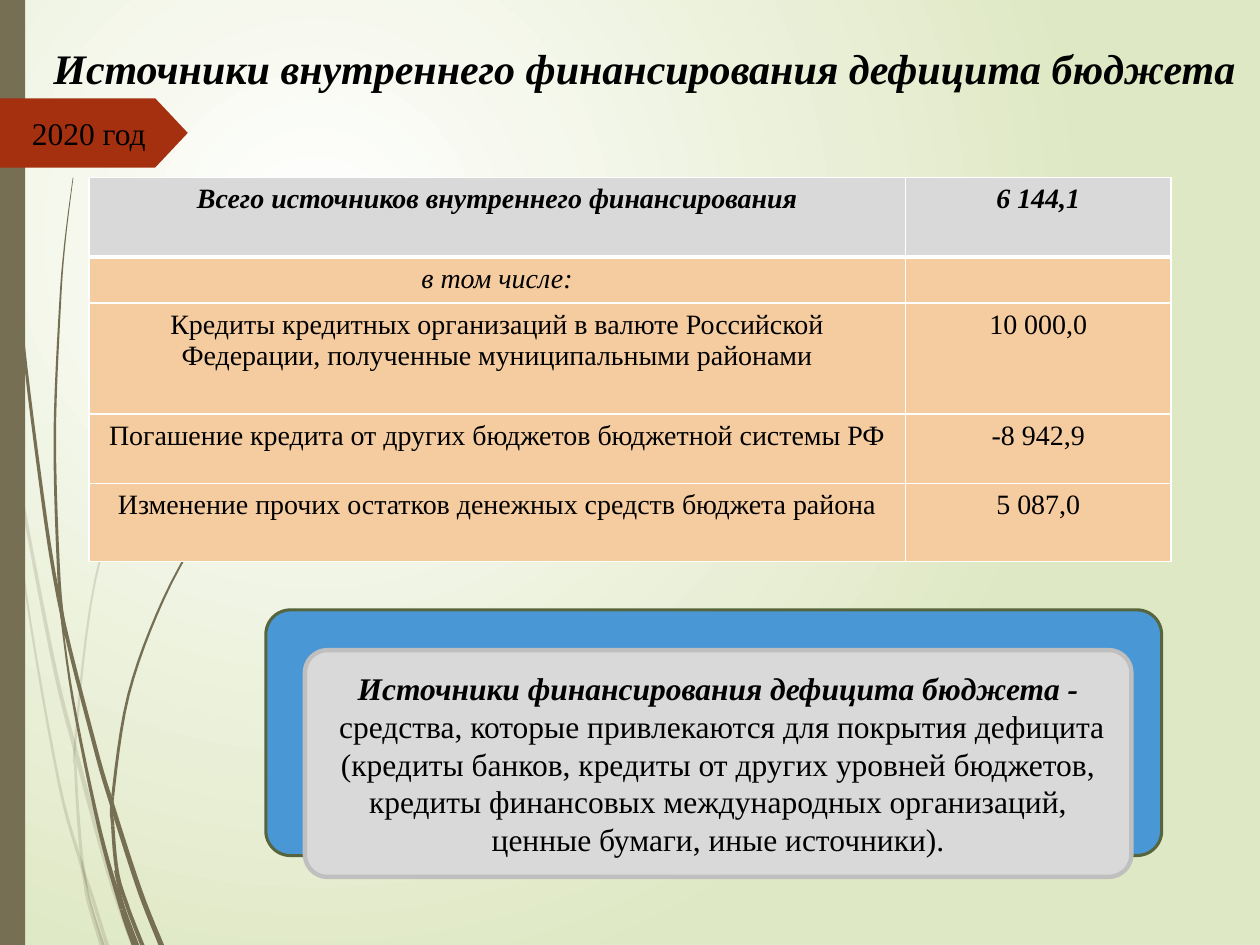
from dataclasses import dataclass
from typing import NamedTuple

import lxml.etree
import pptx
import pptx.dml.color
import pptx.enum.shapes
import pptx.enum.text
import pptx.oxml.ns
import pptx.util

WIDE, HIGH = pptx.util.Inches(10), pptx.util.Inches(7.5)
UNIT = WIDE // 100
ROWS = 75
STEPS = 6
KIND = pptx.enum.shapes.MSO_SHAPE
ALIGN = pptx.enum.text.PP_ALIGN
ANCHOR = pptx.enum.text.MSO_ANCHOR


@dataclass(frozen=True)
class Theme:
    font: str = "Times New Roman"
    ink: str = "000000"
    white: str = "FFFFFF"
    lime: str = "DFE8C4"
    stem: str = "766F54"
    rust: str = "A53010"
    gray: str = "D9D9D9"
    rim: str = "BFBFBF"
    peach: str = "F5CBA0"
    blue: str = "4A97D6"
    moss: str = "56653E"
    title: int = 24
    body: int = 18
    cell: int = 16


THEME = Theme()


class Box(NamedTuple):
    left: float
    top: float
    width: float
    height: float


class Line(NamedTuple):
    text: str
    bold: bool = False
    slant: bool = False


class Wisp(NamedTuple):
    knots: list[tuple[float, float]]
    cuts: list[int]
    thin: float
    thick: float
    alpha: int = 100


class Plate(NamedTuple):
    kind: int
    box: Box
    fill: str
    bend: float | None = None
    edge: str | None = None
    weight: float = 0


class Row(NamedTuple):
    height: float
    label: Line
    value: Line
    fill: str = THEME.peach
    base: float = 1


WISPS = [
    Wisp([(0, 29), (0.9, 35), (4.15, 52.1), (6, 59.6), (8.65, 69.3), (10.6, 75)],
         [1, 3], 0.2, 0.45, 20),
    Wisp([(0.8, 35), (2.05, 47), (4.65, 62), (6.5, 68.8), (7, 71.4), (8.1, 75)],
         [4], 0.1, 0.4, 20),
    Wisp([(21.7, 15.3), (15.85, 24.5), (11.05, 34.8), (7.55, 46.1), (6, 58.6),
          (6, 61), (6.2, 64.6), (6.6, 68.8), (7.3, 71.1), (8.5, 75)], [4, 5, 8], 0.1, 0.3, 20),
    Wisp([(6.5, 68.3), (7.1, 71.3), (8.2, 75)], [], 0.1, 0.2, 20),
    Wisp([(0.25, 0), (0.4, 4.8), (0.55, 11), (1.45, 23.3), (2.85, 35.5), (4.65, 47.5),
          (7.5, 59.1), (9, 64.2), (11.1, 70.7), (12.8, 75)], [5, 7], 0.1, 0.45),
    Wisp([(4.7, 47.7), (5.8, 55.6), (7.9, 65.8), (9.7, 72.2), (10.7, 75)], [3], 0.1, 0.5),
    Wisp([(5.8, 14.1), (5.15, 19.3), (4.75, 24.5), (4.35, 34.9), (4.7, 46.2), (5.2, 50.5)],
         [4], 0.05, 0.3),
    Wisp([(21.6, 34.4), (19.1, 37.35), (16.85, 40.55), (13, 47.5), (10.2, 55.15),
          (8.95, 63.2), (8.95, 65.5), (9.3, 69.2), (10.1, 71.9), (11.3, 75)], [5, 6, 8], 0.1, 0.35),
    Wisp([(9.1, 69.1), (9.8, 71.9), (10.9, 75)], [], 0.1, 0.3),
]

PLATES = [
    Plate(KIND.RECTANGLE, Box(0, 0, 2, ROWS), THEME.stem),
    Plate(KIND.PENTAGON, Box(0, 7.8, 14.9, 5.5), THEME.rust, 0.47),
    Plate(KIND.ROUNDED_RECTANGLE, Box(21.1, 48.4, 71.1, 19.5), THEME.blue, 0.1, THEME.moss, 1.75),
]
CARD = Plate(KIND.ROUNDED_RECTANGLE, Box(24.2, 51.6, 65.6, 18), THEME.gray, 0.1, THEME.rim, 2.5)
NOTE = [
    Line("Источники финансирования дефицита бюджета -", True, True),
    Line(" средства, которые привлекаются для покрытия дефицита (кредиты банков, "
         "кредиты от других уровней бюджетов, кредиты финансовых международных "
         "организаций, ценные бумаги, иные источники)."),
]

COLS = [64.8, 21.1]
TABLE = [
    Row(6.3, Line("Всего источников внутреннего финансирования", True, True),
        Line("6 144,1", True, True), THEME.gray, 3),
    Row(3.6, Line("в том числе:", slant=True), Line("")),
    Row(8.8, Line("Кредиты кредитных организаций в валюте Российской Федерации, "
                  "полученные муниципальными районами"), Line("10 000,0")),
    Row(5.5, Line("Погашение кредита от других бюджетов бюджетной системы РФ"), Line("-8 942,9")),
    Row(6.2, Line("Изменение прочих остатков денежных средств бюджета района"), Line("5 087,0")),
]


def span(size: float) -> int:
    return round(size * UNIT)


def place(box: Box) -> list[int]:
    return [span(size) for size in box]


def tint(code: str):
    return pptx.dml.color.RGBColor.from_string(code)


def tag(node, name: str, **attrs: str):
    return lxml.etree.SubElement(node, pptx.oxml.ns.qn(name), attrs)


def write(frame, lines: list[Line], size: int, align=ALIGN.CENTER) -> None:
    frame.word_wrap = True
    frame.text = "\n".join(line.text for line in lines)
    for para, line in zip(frame.paragraphs, lines):
        para.alignment = align
        if not para.runs:
            tag(para._p, "a:endParaRPr", sz=str(size * 100))
        for run in para.runs:
            font = run.font
            font.name, font.size = THEME.font, pptx.util.Pt(size)
            font.bold, font.italic = line.bold, line.slant
            font.color.rgb = tint(THEME.ink)


def paint(slide) -> None:
    fill = slide.background.fill
    fill.gradient()
    for stop, code, spot in zip(fill.gradient_stops, (THEME.white, THEME.lime), (0, 1)):
        stop.color.rgb, stop.position = tint(code), spot
    grad = slide.element.xpath(".//p:bgPr/a:gradFill")[0]
    for lin in grad.xpath("a:lin"):
        grad.remove(lin)
    tag(tag(grad, "a:path", path="circle"), "a:fillToRect",
        l="50000", t="50000", r="100000", b="100000")


def curve(knots: list[tuple[float, float]]) -> list[tuple[float, float]]:
    ends = [knots[0], *knots, knots[-1]]
    dots = []
    for a, b, c, d in zip(ends, ends[1:], ends[2:], ends[3:]):
        for step in range(STEPS):
            t = step / STEPS
            dots.append(tuple(
                q + t / 2 * (r - p + t * (2 * p - 5 * q + 4 * r - s + t * (3 * (q - r) + s - p)))
                for p, q, r, s in zip(a, b, c, d)))
    return [*dots, knots[-1]]


def sweep(slide, wisp: Wisp) -> None:
    dots = curve(wisp.knots)
    left, right = [], []
    for rank, (x, y) in enumerate(dots):
        half = (wisp.thin + (wisp.thick - wisp.thin) * rank / (len(dots) - 1)) / 2
        left.append((span(max(x - half, 0)), span(y)))
        right.append((span(x + half), span(y)))
    marks = [0, *(cut * STEPS for cut in wisp.cuts), len(dots) - 1]
    for head, tail in zip(marks, marks[1:]):
        part = slice(head, tail + 1)
        ring = left[part] + right[part][::-1]
        pen = slide.shapes.build_freeform(*ring[0])
        pen.add_line_segments(ring[1:], close=True)
        shape = pen.convert_to_shape()
        dress(shape, THEME.stem)
        if wisp.alpha < 100:
            tag(shape.element.spPr.xpath("a:solidFill/a:srgbClr")[0], "a:alpha",
                val=str(wisp.alpha * 1000))


def dress(shape, fill: str) -> None:
    shape.shadow.inherit = False
    shape.fill.solid()
    shape.fill.fore_color.rgb = tint(fill)
    shape.line.fill.background()


def stamp(slide, plate: Plate):
    shape = slide.shapes.add_shape(plate.kind, *place(plate.box))
    dress(shape, plate.fill)
    if plate.bend is not None:
        shape.adjustments[0] = plate.bend
    if plate.edge:
        shape.line.color.rgb = tint(plate.edge)
        shape.line.width = pptx.util.Pt(plate.weight)
    return shape


def label(slide, box: Box, line: Line, size: int, align) -> None:
    write(slide.shapes.add_textbox(*place(box)).text_frame, [line], size, align)


def border(cell, top: float, base: float) -> None:
    props = cell._tc.get_or_add_tcPr()
    for side, weight in zip("LRTB", (1, 1, top, base)):
        edge = tag(props, f"a:ln{side}", w=str(pptx.util.Pt(weight)))
        tag(tag(edge, "a:solidFill"), "a:srgbClr", val=THEME.white)


def chart(slide, rows: list[Row]) -> None:
    box = Box(7.05, 14.1, sum(COLS), sum(row.height for row in rows))
    table = slide.shapes.add_table(len(rows), len(COLS), *place(box)).table
    table.first_row = table.horz_banding = False
    for col, width in zip(table.columns, COLS):
        col.width = span(width)
    top = 1
    for rank, row in enumerate(rows):
        table.rows[rank].height = span(row.height)
        for cell, line in zip(table.rows[rank].cells, (row.label, row.value)):
            write(cell.text_frame, [line], THEME.cell)
            border(cell, top, row.base)
            cell.fill.solid()
            cell.fill.fore_color.rgb = tint(row.fill)
        top = row.base


def main() -> None:
    deck = pptx.Presentation()
    deck.slide_width, deck.slide_height = WIDE, HIGH
    slide = deck.slides.add_slide(deck.slide_layouts[6])
    paint(slide)
    for wisp in WISPS:
        sweep(slide, wisp)
    for plate in PLATES:
        stamp(slide, plate)
    label(slide, Box(2.7, 2.9, 96.9, 6.5),
          Line("Источники внутреннего финансирования дефицита бюджета", True, True),
          THEME.title, ALIGN.CENTER)
    label(slide, Box(1.55, 8.6, 12.5, 4), Line("2020 год"), THEME.body, ALIGN.LEFT)
    chart(slide, TABLE)
    frame = stamp(slide, CARD).text_frame
    frame.margin_left = frame.margin_right = span(1.5)
    frame.vertical_anchor = ANCHOR.MIDDLE
    write(frame, NOTE, THEME.body)
    deck.save("out.pptx")


if __name__ == "__main__":
    main()
